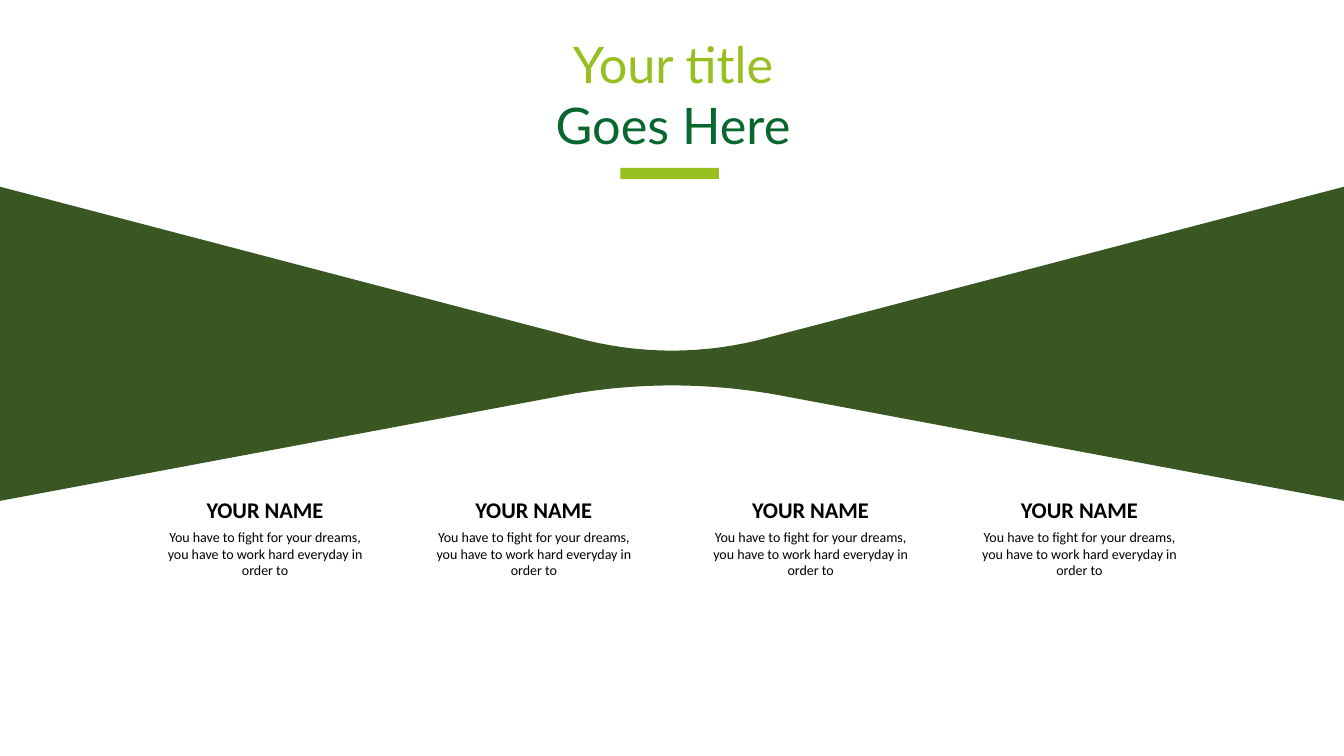
from dataclasses import dataclass

from pptx import Presentation
from pptx import util as u
from pptx.dml.color import RGBColor
from pptx.enum import shapes, text

COLUMNS, ROWS = 32, 18
TITLE_ONLY = 5


@dataclass(frozen=True)
class Theme:
    lime: str = "97BF1F"
    green: str = "08672F"
    forest: str = "385723"
    black: str = "000000"
    title_font: str = "Lato"
    body_font: str = "Calibri"
    title_size: int = 36
    name_size: int = 16
    body_size: int = 10


class SlideBuilder:
    """Draws on one slide; lengths are grid columns and rows."""

    def __init__(self, presentation, theme):
        self.theme = theme
        self.cell_width = presentation.slide_width / COLUMNS
        self.cell_height = presentation.slide_height / ROWS
        self.slide = presentation.slides.add_slide(presentation.slide_layouts[TITLE_ONLY])

    def point(self, column, row):
        return u.Emu(round(column * self.cell_width)), u.Emu(round(row * self.cell_height))

    def box(self, left, top, width, height):
        return *self.point(left, top), *self.point(width, height)

    def fill_text(self, frame, lines, font, size, bold=False):
        """Fill a frame with one centred paragraph per (words, color) pair."""
        frame.word_wrap = True
        frame.auto_size = text.MSO_AUTO_SIZE.NONE
        frame.vertical_anchor = text.MSO_ANCHOR.TOP
        for index, (words, color) in enumerate(lines):
            paragraph = frame.add_paragraph() if index else frame.paragraphs[0]
            paragraph.alignment = text.PP_ALIGN.CENTER
            run = paragraph.add_run()
            run.text = words
            run.font.name = font
            run.font.size = u.Pt(size)
            run.font.bold = bold
            run.font.color.rgb = RGBColor.from_string(color)

    def title(self, box, lines):
        title = self.slide.shapes.title
        title.left, title.top, title.width, title.height = self.box(*box)
        self.fill_text(title.text_frame, lines, self.theme.title_font, self.theme.title_size)

    def label(self, box, words, size, bold=False):
        frame = self.slide.shapes.add_textbox(*self.box(*box)).text_frame
        self.fill_text(frame, [(words, self.theme.black)], self.theme.body_font, size, bold)

    def paint(self, shape, color):
        shape.shadow.inherit = False
        shape.fill.solid()
        shape.fill.fore_color.rgb = RGBColor.from_string(color)
        shape.line.fill.background()

    def bar(self, box, color):
        bar = self.slide.shapes.add_shape(shapes.MSO_SHAPE.RECTANGLE, *self.box(*box))
        self.paint(bar, color)

    def outline(self, points, color):
        start, *others = [self.point(*point) for point in points]
        builder = self.slide.shapes.build_freeform(*start)
        builder.add_line_segments(others, close=True)
        self.paint(builder.convert_to_shape(), color)


def waist_curve(half_width, control_half, end_row, control_row, steps=32):
    """Points of a cubic curve, left to right, symmetric about the slide's centre."""
    points = []
    for step in range(steps + 1):
        t = step / steps
        ends, controls = (1 - t) ** 3 + t ** 3, 3 * t * (1 - t)
        offset = half_width * (t ** 3 - (1 - t) ** 3) + control_half * controls * (2 * t - 1)
        points.append((COLUMNS / 2 + offset, end_row * ends + control_row * controls))
    return points


def main():
    presentation = Presentation()
    presentation.slide_width, presentation.slide_height = u.Inches(13.33), u.Inches(7.5)
    theme = Theme()
    builder = SlideBuilder(presentation, theme)

    left, right, top, bottom = -0.02, COLUMNS + 0.02, 4.44, 11.93
    upper_edge = waist_curve(2.28, 0.78, 8.04, 8.45)
    lower_edge = waist_curve(2.55, 0.87, 9.41, 9.1)
    band = [(left, top), *upper_edge, (right, top),
            (right, bottom), *reversed(lower_edge), (left, bottom)]
    builder.outline(band, theme.forest)

    builder.title((9.53, 0.67, 13.3, 3.14),
                  [("Your title ", theme.lime), ("Goes Here ", theme.green)])
    builder.bar((14.77, 4, 2.35, 0.26), theme.lime)

    card_width, card_top = 5.52, 11.69
    for card in range(4):
        pair, side = divmod(card, 2)
        card_left = 3.55 + 12.99 * pair + 6.4 * side
        builder.label((card_left, card_top, card_width, 0.89), "YOUR NAME",
                      theme.name_size, bold=True)
        builder.label((card_left, card_top + 0.77, card_width, 1.46),
                      "You have to fight for your dreams, "
                      "you have to work hard everyday in order to", theme.body_size)

    presentation.save("out.pptx")


if __name__ == "__main__":
    main()
